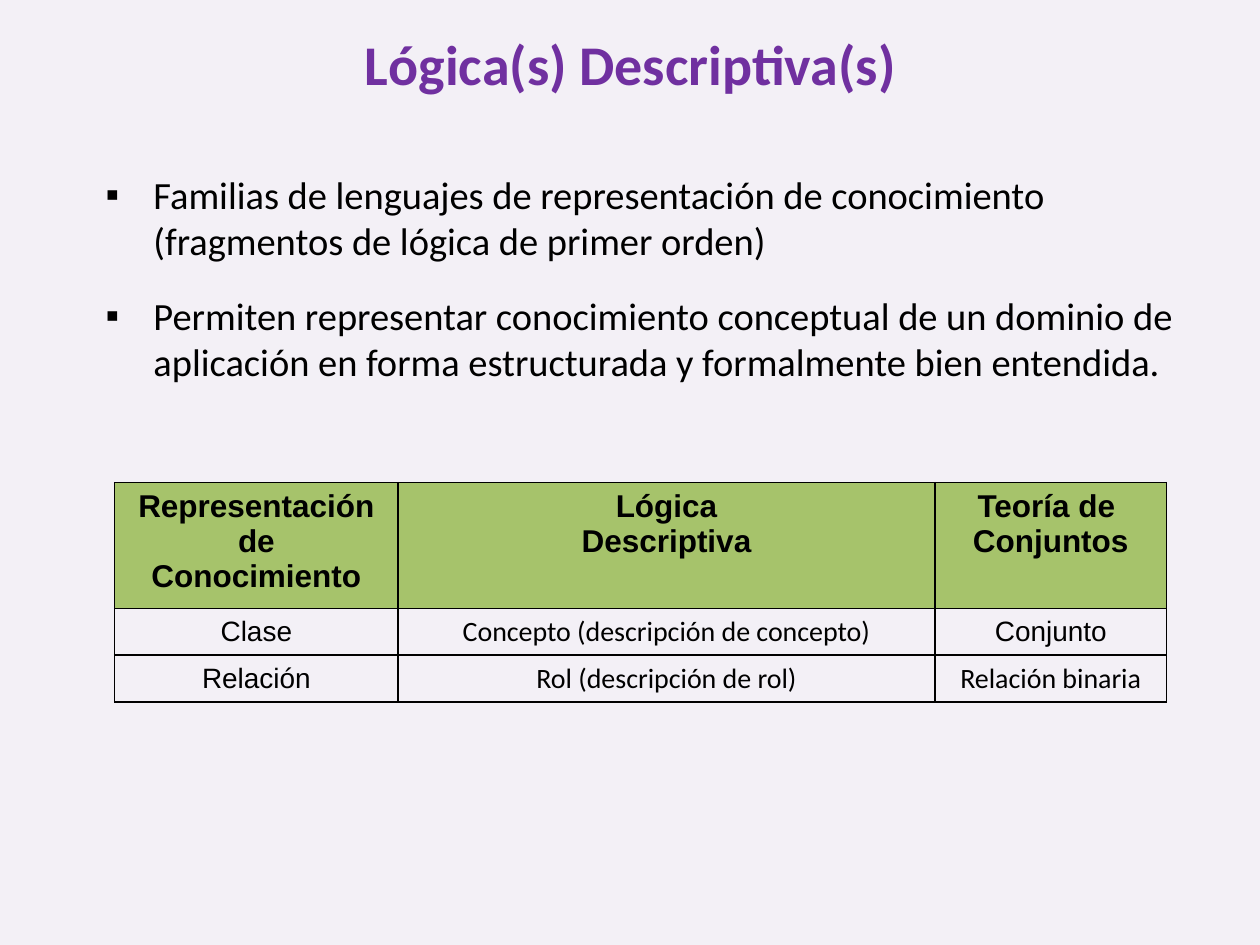
from lxml import etree
from pptx import Presentation
from pptx.dml.color import RGBColor
from pptx.enum.text import MSO_ANCHOR, PP_ALIGN
from pptx.oxml.ns import qn
from pptx.util import Inches, Pt

CENTER = PP_ALIGN.CENTER
TOP, MIDDLE = MSO_ANCHOR.TOP, MSO_ANCHOR.MIDDLE
TITLE_ONLY = 5
BLACK, PURPLE, GREEN, LILAC = "000000", "7030A0", "A6C36B", "F3F0F6"

POINTS = [
    "Familias de lenguajes de representación de conocimiento "
    "(fragmentos de lógica de primer orden)",
    "Permiten representar conocimiento conceptual de un dominio de "
    "aplicación en forma estructurada y formalmente bien entendida.",
]
HEADERS = [
    ["Representación de", "Conocimiento"],
    ["Lógica", "Descriptiva"],
    ["Teoría de ", "Conjuntos"],
]
ROWS = [
    [("Clase", "Arial"), ("Concepto (descripción de concepto)", "Calibri"), ("Conjunto", "Arial")],
    [("Relación", "Arial"), ("Rol (descripción de rol)", "Calibri"), ("Relación binaria", "Calibri")],
]
COLUMN_WIDTHS = [2.25, 4.26, 1.84]
ROW_HEIGHTS = [0.94, 0.37, 0.37]


def color(value):
    """Turn a hex string into a colour."""
    return RGBColor.from_string(value)


def style(para, size, name, ink=BLACK, bold=False):
    """Set the font of a whole paragraph."""
    font = para.font
    font.size, font.name, font.bold = Pt(size), name, bold
    font.color.rgb = color(ink)


def add_title(page, text):
    """Place and format the title placeholder."""
    title = page.shapes.title
    title.left, title.top = Inches(0.28), Inches(0.13)
    title.width, title.height = Inches(9.45), Inches(0.63)
    frame = title.text_frame
    frame.text = text
    frame.vertical_anchor = MIDDLE
    para = frame.paragraphs[0]
    para.alignment, para.line_spacing = CENTER, 1.2
    style(para, 32, "Calibri", PURPLE, True)


def add_bullet(para):
    """Give a paragraph a square bullet with a hanging indent."""
    props = para._p.get_or_add_pPr()
    props.set("marL", str(Inches(0.77)))
    props.set("indent", str(Inches(-0.38)))
    etree.SubElement(props, qn("a:buFont")).set("typeface", "Arial")
    etree.SubElement(props, qn("a:buChar")).set("char", "▪")


def add_points(page, points):
    """Add the bulleted list."""
    box = page.shapes.add_textbox(Inches(0.35), Inches(1.31), Inches(9.37), Inches(6.06))
    frame = box.text_frame
    frame.word_wrap = True
    frame.text = "\n".join(points)
    for index, para in enumerate(frame.paragraphs):
        para.space_before = Pt(4.4 if index else 0)
        para.space_after = Pt(12)
        style(para, 22, "Calibri")
        add_bullet(para)


def add_borders(cell):
    """Draw a thin black line on each side of a cell."""
    props = cell._tc.get_or_add_tcPr()
    for index, side in enumerate(("lnL", "lnR", "lnT", "lnB")):
        line = etree.Element(qn(f"a:{side}"), w=str(Pt(1)))
        fill = etree.SubElement(line, qn("a:solidFill"))
        etree.SubElement(fill, qn("a:srgbClr")).set("val", BLACK)
        props.insert(index, line)


def fill_cell(cell, lines, size, name, header=False):
    """Write and format one table cell."""
    cell.text = "\n".join(lines)
    cell.vertical_anchor = TOP if header else MIDDLE
    for para in cell.text_frame.paragraphs:
        para.alignment = CENTER
        style(para, size, name, bold=header)
    if header:
        cell.fill.solid()
        cell.fill.fore_color.rgb = color(GREEN)
    else:
        cell.fill.background()
    add_borders(cell)


def add_terms_table(page):
    """Add the table of equivalent terms."""
    frame = page.shapes.add_table(
        len(ROW_HEIGHTS), len(COLUMN_WIDTHS), Inches(0.91), Inches(3.83),
        Inches(sum(COLUMN_WIDTHS)), Inches(sum(ROW_HEIGHTS)))
    table = frame.table
    for column, width in zip(table.columns, COLUMN_WIDTHS):
        column.width = Inches(width)
    for row, height in zip(table.rows, ROW_HEIGHTS):
        row.height = Inches(height)
    for col, lines in enumerate(HEADERS):
        fill_cell(table.cell(0, col), lines, 18, "Arial", header=True)
    for row, terms in enumerate(ROWS, start=1):
        for col, (text, name) in enumerate(terms):
            fill_cell(table.cell(row, col), [text], 16, name)


def main():
    """Build and save the slide."""
    deck = Presentation()
    deck.slide_width, deck.slide_height = Inches(10), Inches(7.5)
    page = deck.slides.add_slide(deck.slide_layouts[TITLE_ONLY])
    page.background.fill.solid()
    page.background.fill.fore_color.rgb = color(LILAC)
    add_title(page, "Lógica(s) Descriptiva(s)")
    add_points(page, POINTS)
    add_terms_table(page)
    deck.save("out.pptx")


if __name__ == "__main__":
    main()
